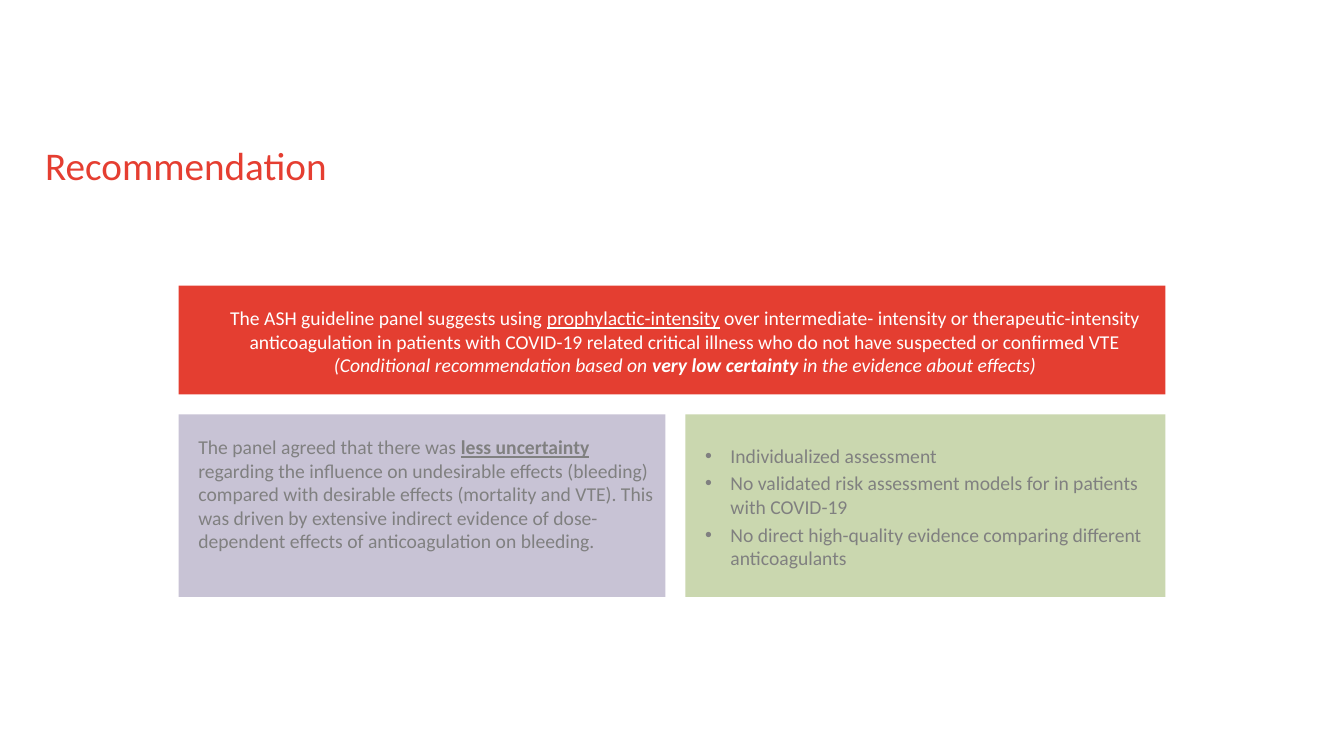
from pptx import Presentation
from pptx.dml.color import RGBColor
from pptx.enum.shapes import MSO_SHAPE
from pptx.enum.text import MSO_ANCHOR, PP_ALIGN
from pptx.oxml.ns import qn
from pptx.util import Cm, Pt
from lxml import etree

RECT = MSO_SHAPE.RECTANGLE
TOP, MIDDLE = MSO_ANCHOR.TOP, MSO_ANCHOR.MIDDLE
LEFT, CENTER = PP_ALIGN.LEFT, PP_ALIGN.CENTER
FONT = "Calibri"
RED, WHITE, GREY = "E43E31", "FFFFFF", "808080"
LILAC, GREEN = "C8C3D5", "CAD7AF"
GAP = 0.5

ADVICE = [
    ("The ASH guideline panel suggests using ", ""),
    ("prophylactic-intensity", "u"),
    (" over intermediate- intensity or therapeutic-intensity anticoagulation "
     "in patients with COVID-19 related critical illness who do not have "
     "suspected or confirmed VTE ", ""),
    ("(Conditional recommendation based on ", "i"),
    ("very low certainty ", "bi"),
    ("in the evidence about effects)", "i"),
]
REASON = [
    ("The panel agreed that there was ", ""),
    ("less uncertainty", "bu"),
    (" regarding the influence on undesirable effects (bleeding) compared "
     "with desirable effects (mortality and VTE). This was driven by "
     "extensive indirect evidence of dose-dependent effects of "
     "anticoagulation on bleeding.", ""),
]
POINTS = [
    "Individualized assessment",
    "No validated risk assessment models for in patients with COVID-19",
    "No direct high-quality evidence comparing different anticoagulants",
]


def color(code):
    return RGBColor.from_string(code)


def set_font(para, size, code):
    para.font.name = FONT
    para.font.size = Pt(size)
    para.font.color.rgb = color(code)


def set_frame(shape, top=0, anchor=TOP):
    frame = shape.text_frame
    frame.word_wrap = True
    frame.vertical_anchor = anchor
    frame.margin_left = frame.margin_right = frame.margin_bottom = 0
    frame.margin_top = Cm(top)
    return frame


def indent(para, left, first=0):
    props = para._p.get_or_add_pPr()
    props.set("marL", str(Cm(left)))
    props.set("indent", str(Cm(first)))
    return props


def add_runs(para, parts):
    for text, style in parts:
        run = para.add_run()
        run.text = text
        if "b" in style:
            run.font.bold = True
        if "i" in style:
            run.font.italic = True
        if "u" in style:
            run.font.underline = True


def add_panel(slide, box, fill, top=0, anchor=TOP):
    shape = slide.shapes.add_shape(RECT, *map(Cm, box))
    shape.shadow.inherit = False
    shape.fill.solid()
    shape.fill.fore_color.rgb = color(fill)
    shape.line.fill.background()
    return set_frame(shape, top, anchor)


def add_title(slide, box):
    frame = set_frame(slide.shapes.add_textbox(*map(Cm, box)), 0.03)
    para = frame.paragraphs[0]
    para.text = "Recommendation"
    set_font(para, 28, "E53E31")


def add_advice(slide, box):
    para = add_panel(slide, box, RED, 0.07, MIDDLE).paragraphs[0]
    para.alignment = CENTER
    indent(para, 0.66)
    add_runs(para, ADVICE)
    set_font(para, 14, WHITE)


def add_reason(slide, box):
    para = add_panel(slide, box, LILAC, 0.52).paragraphs[0]
    para.alignment = LEFT
    indent(para, 0.5)
    add_runs(para, REASON)
    set_font(para, 14, GREY)


def add_points(slide, box):
    frame = add_panel(slide, box, GREEN, 0.74)
    for i, text in enumerate(POINTS):
        para = frame.add_paragraph() if i else frame.paragraphs[0]
        para.text = text
        para.alignment = LEFT
        if i:
            para.space_before = Pt(3)
        props = indent(para, 1.14, -0.64)
        etree.SubElement(props, qn("a:buFont"), typeface="Arial")
        etree.SubElement(props, qn("a:buChar"), char="•")
        set_font(para, 14, GREY)


def add_body(slide, box):
    left, top, width, height = box
    head, half = 2.74, 12.27
    low = top + head + GAP
    rest = height - head - GAP
    add_advice(slide, (left, top, width, head))
    add_reason(slide, (left, low, half, rest))
    add_points(slide, (left + half + GAP, low, width - half - GAP, rest))


def main():
    deck = Presentation()
    deck.slide_width, deck.slide_height = Cm(33.87), Cm(19.05)
    slide = deck.slides.add_slide(deck.slide_layouts[6])
    add_title(slide, (1.14, 3.53, 19.1, 1.24))
    add_body(slide, (4.5, 7.2, 24.87, 7.84))
    deck.save("out.pptx")


if __name__ == "__main__":
    main()
